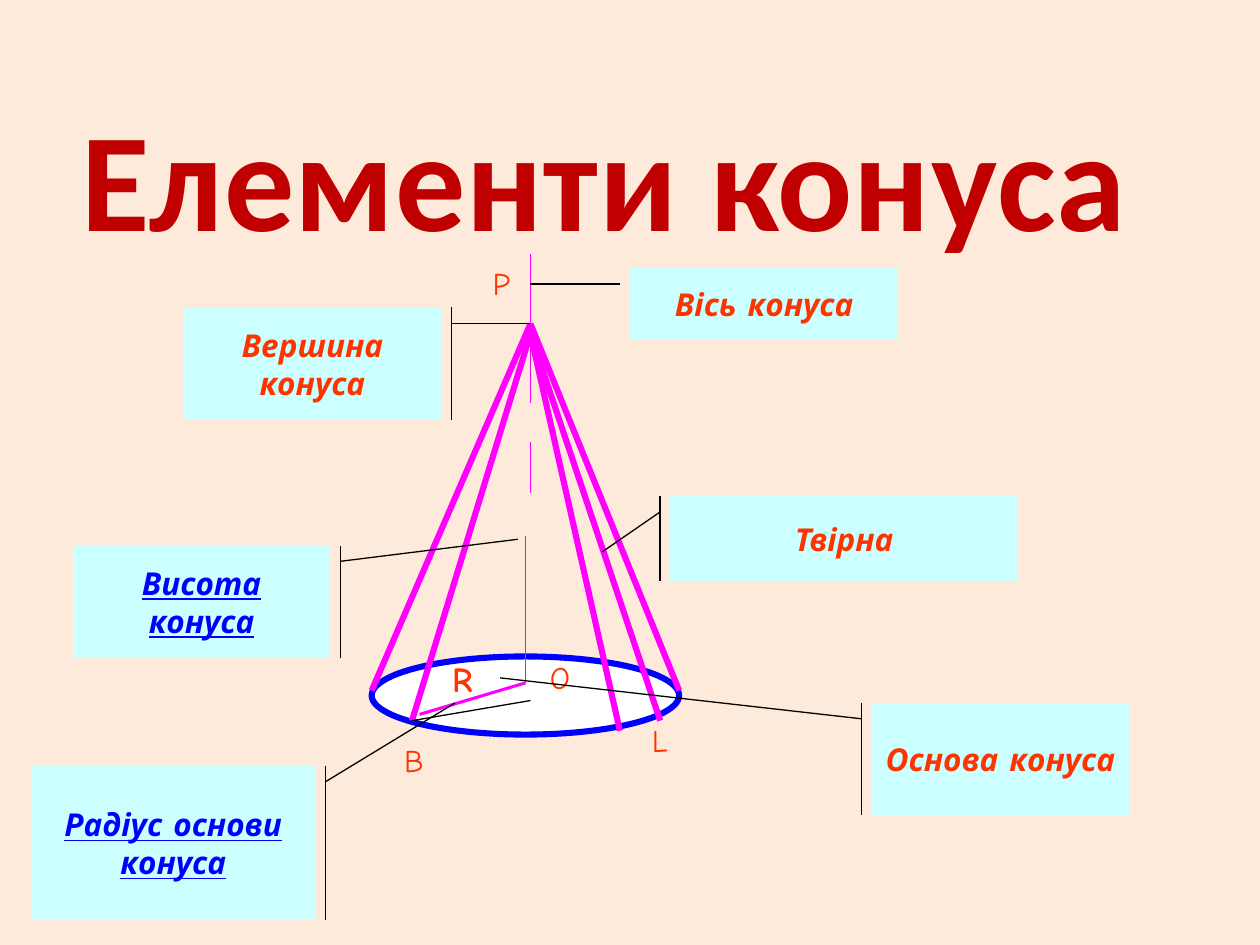
import dataclasses

import lxml.etree
import pptx
import pptx.dml.color
import pptx.enum.shapes
import pptx.enum.text
import pptx.oxml.ns
import pptx.util

COLUMNS, ROWS = 100, 75


@dataclasses.dataclass(frozen=True)
class Theme:
    """Colours, fonts and sizes of the slide."""
    background: str = "FDEADA"
    title: str = "C00000"
    label: str = "FF3300"
    link: str = "0000FF"
    panel: str = "CCFFFF"
    base: str = "FFFFFF"
    outline: str = "0000FF"
    edge: str = "FF00FF"
    ink: str = "000000"
    title_font: str = "Calibri"
    label_font: str = "Comic Neue"
    title_size: int = 80
    label_size: int = 18
    radius_size: int = 20
    thick: float = 3.5
    medium: float = 1.75
    thin: float = 0.75


THEME = Theme()


def grid(cells):
    """Turn grid cells, ten to the inch, into a length."""
    return pptx.util.Inches(cells / 10)


def color(name):
    """Return the RGB colour for a hexadecimal name."""
    return pptx.dml.color.RGBColor.from_string(name)


def add_run(frame, text, font, size, tint, bold=False, italic=False, underline=None):
    """Write one centred run in the first paragraph of a text frame."""
    paragraph = frame.paragraphs[0]
    paragraph.alignment = pptx.enum.text.PP_ALIGN.CENTER
    run = paragraph.add_run()
    run.text = text
    run.font.name, run.font.size = font, pptx.util.Pt(size)
    run.font.bold, run.font.italic, run.font.underline = bold, italic, underline
    run.font.color.rgb = color(tint)
    return run


def add_text(slide, box, text, font, size, tint, bold=False):
    """Add a text box that does not wrap."""
    frame = slide.shapes.add_textbox(*map(grid, box)).text_frame
    frame.word_wrap = False
    frame.auto_size = pptx.enum.text.MSO_AUTO_SIZE.SHAPE_TO_FIT_TEXT
    return add_run(frame, text, font, size, tint, bold)


def add_shape(slide, kind, box, fill, line, width):
    """Add a filled and outlined preset shape."""
    shape = slide.shapes.add_shape(kind, *map(grid, box))
    shape.shadow.inherit = False
    shape.fill.solid()
    shape.fill.fore_color.rgb = color(fill)
    shape.line.color.rgb = color(line)
    shape.line.width = pptx.util.Pt(width)
    return shape


def add_line(slide, start, end, tint, width):
    """Add a straight line without a shadow."""
    line = slide.shapes.add_connector(
        pptx.enum.shapes.MSO_CONNECTOR.STRAIGHT, *map(grid, (*start, *end)))
    line.line.color.rgb = color(tint)
    line.line.width = pptx.util.Pt(width)
    properties = line._element.spPr
    lxml.etree.SubElement(properties, pptx.oxml.ns.qn("a:effectLst"))


def add_callout(slide, box, target, text, linked=False, accent=True):
    """Add a panel whose leader starts at its nearer side and ends at target."""
    kinds = pptx.enum.shapes.MSO_SHAPE
    kind = kinds.LINE_CALLOUT_1_ACCENT_BAR if accent else kinds.LINE_CALLOUT_2_NO_BORDER
    shape = add_shape(slide, kind, box, THEME.panel, THEME.ink, THEME.thin)
    left, top, width, height = box
    gap, drop = 0.83, 1.25
    start = (left - gap if target[0] < left else left + width + gap, top + drop)
    points = [start, target]
    if not accent:
        points.insert(1, ((start[0] + target[0]) / 2, (start[1] + target[1]) / 2))
    for index, (x, y) in enumerate(points):
        shape.adjustments[2 * index] = (y - top) / height
        shape.adjustments[2 * index + 1] = (x - left) / width
    frame = shape.text_frame
    frame.word_wrap = True
    frame.vertical_anchor = pptx.enum.text.MSO_ANCHOR.MIDDLE
    add_run(frame, text, THEME.label_font, THEME.label_size,
            THEME.link if linked else THEME.label, True, True, linked or None)


def add_cone(slide):
    """Draw the base, axis, generatrices, height and radius of the cone."""
    add_shape(slide, pptx.enum.shapes.MSO_SHAPE.OVAL, (29.5, 52.1, 24.4, 6.2),
              THEME.base, THEME.outline, THEME.thick)
    axis, center = 42.1, (41.7, 54.2)
    for top, bottom in ((35.1, 39.1), (20.2, 32)):
        add_line(slide, (axis, top), (axis, bottom), THEME.edge, THEME.thin)
    for apex, foot in ((25.7, (29.5, 54.8)), (25.7, (53.9, 54.8)), (26.5, (32.7, 57.2)),
                       (26.5, (52.4, 57.2)), (26.5, (49.2, 58))):
        add_line(slide, (axis, apex), foot, THEME.edge, THEME.thick)
    add_line(slide, (axis, 55.6), (32.7, 57.2), THEME.ink, THEME.thin)
    add_line(slide, (33.3, 56.7), center, THEME.edge, THEME.medium)
    add_line(slide, (41.7, 42.5), center, THEME.edge, THEME.thin)


def add_letters(slide):
    """Name the points of the cone and its radius."""
    for letter, box in (("B", (30.8, 58.3, 4.1, 5)), ("P", (37.9, 20.5, 3.8, 5)),
                        ("O", (42.1, 51.7, 4.7, 5)), ("L", (50.4, 56.7, 3.9, 5))):
        add_text(slide, box, letter, THEME.label_font, THEME.label_size, THEME.label)
    add_text(slide, (34.8, 51.7, 3.8, 4.3), "R", THEME.label_font,
             THEME.radius_size, THEME.label, True)


def main():
    """Build and save the slide."""
    presentation = pptx.Presentation()
    presentation.slide_width, presentation.slide_height = grid(COLUMNS), grid(ROWS)
    slide = presentation.slides.add_slide(presentation.slide_layouts[6])
    slide.background.fill.solid()
    slide.background.fill.fore_color.rgb = color(THEME.background)
    add_cone(slide)
    add_letters(slide)
    add_callout(slide, (50, 21.3, 21.3, 5.6), (42.1, 22.55), "Вісь конуса", accent=False)
    add_callout(slide, (14.6, 24.4, 20.4, 8.9), (42.1, 25.65), "Вершина конуса")
    add_callout(slide, (53.2, 39.4, 27.6, 6.7), (47.8, 43.8), "Твірна")
    add_callout(slide, (69.2, 55.8, 20.4, 8.9), (39.7, 53.8), "Основа конуса")
    add_callout(slide, (5.8, 43.3, 20.4, 8.9), (41.1, 42.8), "Висота конуса", linked=True)
    add_callout(slide, (2.5, 60.8, 22.5, 12.2), (36.1, 55.8), "Радіус основи конуса",
                linked=True)
    title = add_text(slide, (5.1, 6.8, 85.8, 14.5), "Елементи конуса",
                     THEME.title_font, THEME.title_size, THEME.title, True)
    title._r.get_or_add_rPr().set("spc", "50")
    presentation.save("out.pptx")


if __name__ == "__main__":
    main()
